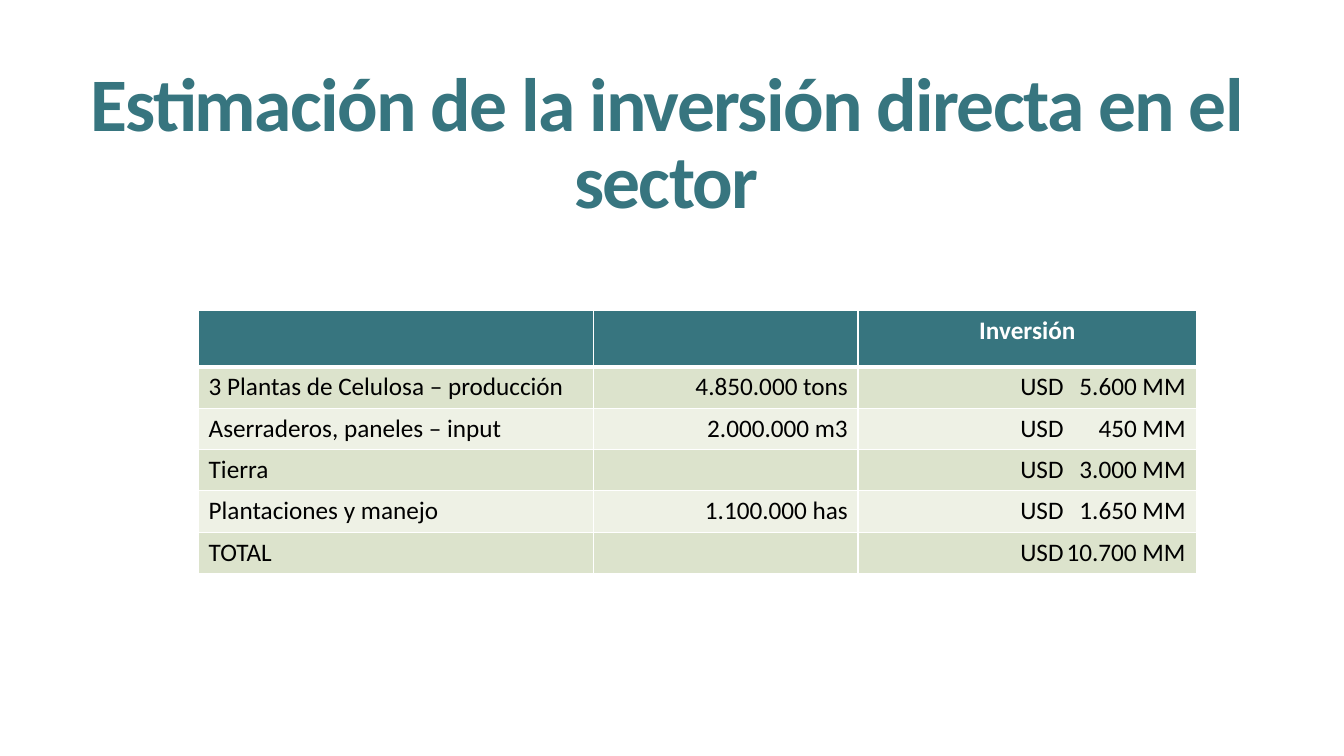
from dataclasses import dataclass

from lxml.etree import SubElement
from pptx import Presentation
from pptx.dml.color import RGBColor
from pptx.enum.text import MSO_ANCHOR, MSO_AUTO_SIZE, PP_ALIGN
from pptx.oxml import parse_xml
from pptx.oxml.ns import nsdecls, qn
from pptx.util import Inches, Pt


@dataclass(frozen=True)
class Theme:
    font: str = "Calibri"
    title_size: int = 54
    table_size: int = 18
    teal: str = "37757F"
    band_dark: str = "DCE3CC"
    band_light: str = "EEF1E5"
    white: str = "FFFFFF"
    black: str = "000000"


HEADINGS = ("", "", "Inversión")
INVESTMENTS = (
    ("3 Plantas de Celulosa – producción", "4.850.000 tons", "USD\t5.600 MM"),
    ("Aserraderos, paneles – input", "2.000.000 m3", "USD\t450 MM"),
    ("Tierra", "", "USD\t3.000 MM"),
    ("Plantaciones y manejo", "1.100.000 has", "USD\t1.650 MM"),
    ("TOTAL", "", "USD\t10.700 MM"),
)
COLUMN_WIDTHS = (3.92, 2.62, 3.36)
HEADER_HEIGHT, ROW_HEIGHT = 0.56, 0.41
CURRENCY_INSET, AMOUNT_TAB = 1.61, 1.64


class SlideBuilder:
    def __init__(self, slide, theme):
        self.slide = slide
        self.theme = theme

    def format_runs(self, paragraph, size, color, bold=False):
        for run in paragraph.runs:
            run.font.name = self.theme.font
            run.font.size = Pt(size)
            run.font.bold = bold
            run.font.color.rgb = RGBColor.from_string(color)

    def title(self, wording, left, top, width, height):
        heading = self.slide.shapes.title
        heading.left, heading.top = Inches(left), Inches(top)
        heading.width, heading.height = Inches(width), Inches(height)
        frame = heading.text_frame
        frame.text = wording
        frame.word_wrap = True
        frame.auto_size = MSO_AUTO_SIZE.NONE
        frame.vertical_anchor = MSO_ANCHOR.MIDDLE
        paragraph = frame.paragraphs[0]
        paragraph.alignment = PP_ALIGN.CENTER
        paragraph.line_spacing = 0.85
        self.format_runs(paragraph, self.theme.title_size, self.theme.teal, True)
        for run in paragraph.runs:
            run.font._element.set("spc", "-120")

    def borders(self, cell, top=1, bottom=1):
        """Draw the white rules of a cell, with widths in points."""
        properties = cell._tc.get_or_add_tcPr()
        sides = {"L": 1, "R": 1, "T": top, "B": bottom}
        for position, (side, points) in enumerate(sides.items()):
            properties.insert(position, parse_xml(
                f'<a:ln{side} {nsdecls("a")} w="{Pt(points)}"><a:solidFill>'
                f'<a:srgbClr val="{self.theme.white}"/></a:solidFill></a:ln{side}>'))

    def cell(self, cell, wording, fill, color, alignment, bold=False):
        cell.fill.solid()
        cell.fill.fore_color.rgb = RGBColor.from_string(fill)
        paragraph = cell.text_frame.paragraphs[0]
        paragraph.text = wording
        if "\t" in wording:
            cell.margin_left = Inches(CURRENCY_INSET)
            stops = SubElement(paragraph._p.get_or_add_pPr(), qn("a:tabLst"))
            SubElement(stops, qn("a:tab"), pos=str(Inches(AMOUNT_TAB)), algn="r")
        paragraph.alignment = alignment
        self.format_runs(paragraph, self.theme.table_size, color, bold)

    def table(self, headings, records, left, top):
        theme = self.theme
        height = HEADER_HEIGHT + ROW_HEIGHT * len(records)
        table = self.slide.shapes.add_table(
            len(records) + 1, len(headings), Inches(left), Inches(top),
            Inches(sum(COLUMN_WIDTHS)), Inches(height)).table
        table.horz_banding = False
        for column, width in zip(table.columns, COLUMN_WIDTHS):
            column.width = Inches(width)
        for index, row in enumerate(table.rows):
            row.height = Inches(ROW_HEIGHT if index else HEADER_HEIGHT)

        for column, heading in enumerate(headings):
            cell = table.cell(0, column)
            self.cell(cell, heading, theme.teal, theme.white, PP_ALIGN.CENTER, True)
            self.borders(cell, bottom=3)
        alignments = (PP_ALIGN.LEFT, PP_ALIGN.RIGHT, PP_ALIGN.LEFT)
        for row, record in enumerate(records, start=1):
            band = theme.band_dark if row % 2 else theme.band_light
            for column, wording in enumerate(record):
                cell = table.cell(row, column)
                self.cell(cell, wording, band, theme.black, alignments[column])
                self.borders(cell, top=3 if row == 1 else 1)


def main():
    presentation = Presentation()
    presentation.slide_width = Inches(13.33)
    presentation.slide_height = Inches(7.5)
    title_only = presentation.slide_layouts[5]
    builder = SlideBuilder(presentation.slides.add_slide(title_only), Theme())
    builder.title("Estimación de la inversión directa en el sector",
                  0.72, 0.55, 11.78, 1.81)
    builder.table(HEADINGS, INVESTMENTS, 1.97, 3.08)
    presentation.save("out.pptx")


if __name__ == "__main__":
    main()
